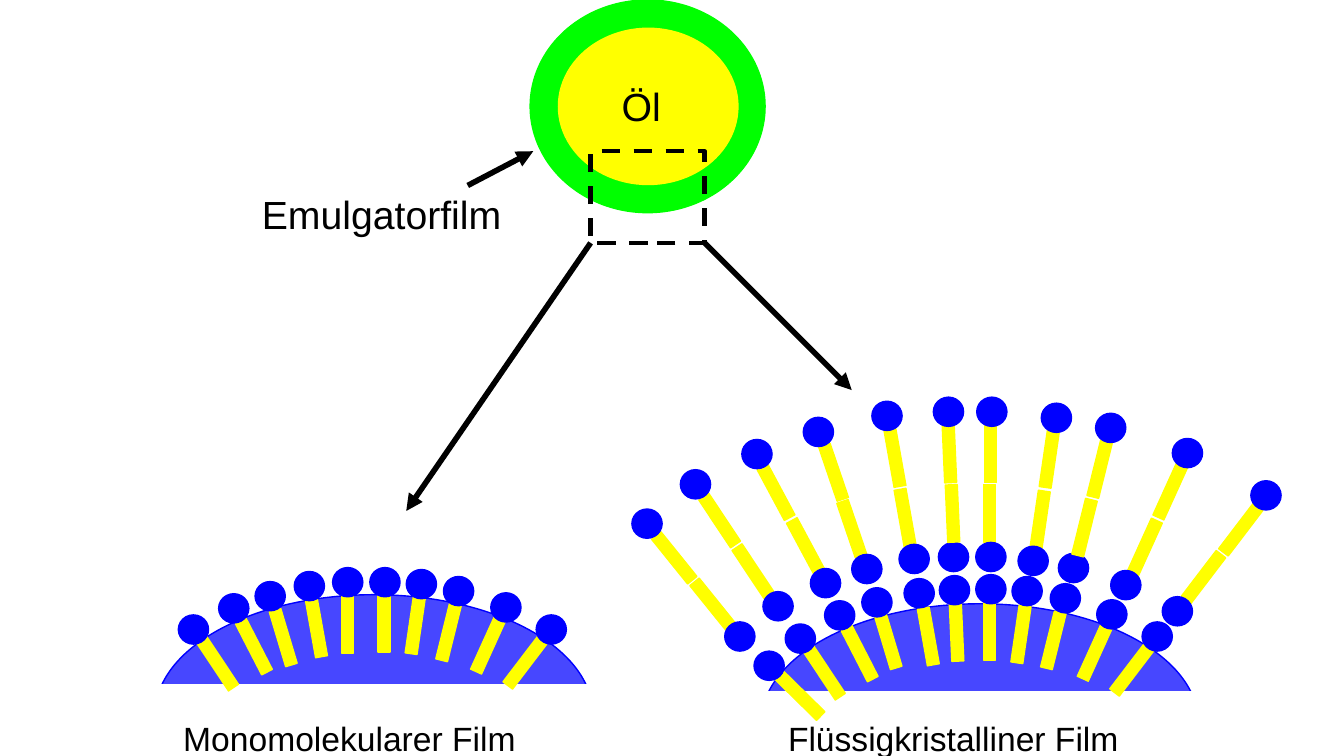
from lxml import etree
from pptx import Presentation
from pptx.dml.color import RGBColor
from pptx.enum import dml, shapes as kinds, text
from pptx.oxml.ns import qn
from pptx.util import Pt

THEME = {
    "film": "00FF00", "oil": "FFFF00", "water": "0000FF", "paper": "FFFFFF", "ink": "000000",
    "font": "Arial", "label": 28, "caption": 24,
    "outline": 1, "arrow": 4, "zoom": 3.25, "dome_alpha": 72,
}
SLIDE = (960, 540)
TAIL = (8.6, 41)
HEAD = (21.6, 20.9)
DOME = (312.5, 170)
MASK = (379.5, 114.5)
CAPTION = (275, 36)

# Boxes are left, top, width, height
DROPLET = (378.7, 0, 167.8, 151.9)
OIL_CORE = (398.9, 20.2, 128.2, 111.6)
ZOOM_FRAME = (421.9, 108, 81.4, 65.5)
LABELS = [("Öl", (437, 55.4, 80, 41)), ("Emulgatorfilm", (180, 132.5, 201, 41))]
ARROWS = [
    ((334.1, 132.5), (380.9, 108)),
    ((421.9, 173.5), (290.2, 365)),
    ((503.3, 173.5), (608.4, 278.6)),
]

# Each molecule: angle, left/top of its tails, left/top of its heads
MONOLAYER = [
    (-33.6, [(151.2, 453.6)], [(127.4, 439.2)]),
    (-27.2, [(177.1, 441.4)], [(156.2, 424.1)]),
    (-16.7, [(198, 434.9)], [(182.2, 415.4)]),
    (-10.1, [(221.8, 428.4)], [(210.2, 408.2)]),
    (0, [(244.1, 425.5)], [(237.6, 405.4)]),
    (0, [(270, 424.8)], [(264.2, 405.4)]),
    (8.3, [(292.3, 426.2)], [(290.2, 406.8)]),
    (13.9, [(316.1, 431.3)], [(316.8, 411.8)]),
    (24.4, [(344.2, 440.6)], [(350.6, 423.4)]),
    (37.3, [(370.8, 452.9)], [(383, 439.2)]),
]
SURFACE_LAYER = [
    (-45.5, [(567.4, 476.6)], [(538.6, 465.1)]),
    (-33.6, [(584.6, 460.1)], [(560.9, 445.7)]),
    (-27.2, [(609.8, 446.4)], [(589, 429.1)]),
    (-16.7, [(630, 437)], [(615.6, 419.8)]),
    (-10.1, [(658.8, 434.2)], [(645.8, 413.3)]),
    (-2.5, [(679, 431.3)], [(671, 411.1)]),
    (0, [(702.7, 430.6)], [(697, 410.4)]),
    (8.3, [(725, 432.7)], [(722.9, 411.8)]),
    (13.9, [(748.1, 437)], [(750.2, 416.9)]),
    (24.4, [(777.6, 445.7)], [(783.4, 428.4)]),
    (37.3, [(804.2, 457.9)], [(815.8, 444.2)]),
]
# Inner heads that lie behind the tails of the double layer
TUCKED_HEADS = [(0, [], [(670.3, 387.4), (756, 395.3)])]
DOUBLE_LAYER = [
    (-38.9, [(504.7, 411.1), (477.4, 378)], [(517.7, 444.2), (451.4, 363.6)]),
    (-33.6, [(533.5, 387.4), (509.8, 351.4)], [(545, 422.6), (486, 335.5)]),
    (-28.2, [(571, 369.4), (550.1, 331.2)], [(578.9, 406.1), (529.9, 313.9)]),
    (-18.8, [(604.1, 357.1), (591.1, 316.8)], [(608.4, 396), (573.8, 298.1)]),
    (-10.1, [(642.2, 349.2), (635, 306.7)], [(642.2, 388.8), (622.8, 286.6)]),
    (-2.5, [(676.1, 346.3), (673.9, 303.8)], [(666.7, 283.7)]),
    (0, [(702.7, 346.3), (703.4, 303.8)], [(697, 387.4), (697.7, 283.7)]),
    (8.3, [(738.7, 350.6), (745.2, 307.4)], [(727.2, 390.2), (743.8, 288)]),
    (13.9, [(770.4, 356.4), (781.2, 314.6)], [(782.6, 295.2)]),
    (24.4, [(813.6, 370.1), (831.6, 330.5)], [(793.4, 407.5), (837.4, 313.2)]),
    (37.3, [(855.4, 391.7), (882, 357.8)], [(830.2, 426.2), (893.5, 343.4)]),
]
FILMS = [
    {"caption": "Monomolekularer Film", "caption_at": (123.8, 509), "dome_at": (110.9, 424.8),
     "mask_at": (83.5, 488.9), "layers": [MONOLAYER]},
    {"caption": "Flüssigkristalliner Film", "caption_at": (555.8, 509), "dome_at": (543.6, 431.3),
     "mask_at": (517, 493.9), "layers": [SURFACE_LAYER, TUCKED_HEADS, DOUBLE_LAYER]},
]


def points(values):
    return [Pt(value) for value in values]


def colour(name):
    return RGBColor.from_string(THEME[name])


def add_figure(parent, preset, box, fill=None, line=None, width=THEME["outline"], angle=0):
    figure = parent.add_shape(preset, *points(box))
    figure.shadow.inherit = False
    figure.rotation = angle % 360
    if fill:
        figure.fill.solid()
        figure.fill.fore_color.rgb = colour(fill)
    else:
        figure.fill.background()
    figure.line.color.rgb = colour(line or fill)
    figure.line.width = Pt(width)
    return figure


def add_label(parent, wording, box, size):
    label = parent.add_textbox(*points(box))
    frame_format = {"word_wrap": True, "auto_size": text.MSO_AUTO_SIZE.SHAPE_TO_FIT_TEXT}
    for attribute, value in frame_format.items():
        setattr(label.text_frame, attribute, value)
    run = label.text_frame.paragraphs[0].add_run()
    run.text = wording
    for attribute, value in {"name": THEME["font"], "size": Pt(THEME[size])}.items():
        setattr(run.font, attribute, value)
    run.font.color.rgb = colour("ink")


def add_arrow(parent, start, end):
    arrow = parent.add_connector(kinds.MSO_CONNECTOR.STRAIGHT, *points(start + end))
    arrow.line.color.rgb = colour("ink")
    arrow.line.width = Pt(THEME["arrow"])
    etree.SubElement(arrow.line._get_or_add_ln(), qn("a:tailEnd"), type="triangle")
    etree.SubElement(arrow._element.spPr, qn("a:effectLst"))


def add_layer(parent, molecules):
    """Draw all tails of a layer, then its heads over them."""
    for angle, tails, _ in molecules:
        for at in tails:
            add_figure(parent, RECTANGLE, at + TAIL, "oil", angle=angle)
    for _, _, heads in molecules:
        for at in heads:
            add_figure(parent, OVAL, at + HEAD, "water")


def add_film(parent, film):
    dome = add_figure(parent, OVAL, film["dome_at"] + DOME, "water")
    tint = dome._element.spPr.find(qn("a:solidFill"))[0]
    etree.SubElement(tint, qn("a:alpha"), val=str(THEME["dome_alpha"] * 1000))
    add_figure(parent, RECTANGLE, film["mask_at"] + MASK, "paper")
    for molecules in film["layers"]:
        add_layer(parent, molecules)
    add_label(parent, film["caption"], film["caption_at"] + CAPTION, "caption")


RECTANGLE = kinds.MSO_SHAPE.RECTANGLE
OVAL = kinds.MSO_SHAPE.OVAL


def main():
    deck = Presentation()
    deck.slide_width, deck.slide_height = points(SLIDE)
    canvas = deck.slides.add_slide(deck.slide_layouts[6]).shapes

    emulsifier = add_figure(canvas, kinds.MSO_SHAPE.DONUT, DROPLET, "film")
    emulsifier.adjustments[0] = 0.131
    add_figure(canvas, OVAL, OIL_CORE, "oil")
    for wording, box in LABELS:
        add_label(canvas, wording, box, "label")
    zoom = add_figure(canvas, RECTANGLE, ZOOM_FRAME, line="ink", width=THEME["zoom"])
    zoom.line.dash_style = dml.MSO_LINE.DASH
    for start, end in ARROWS:
        add_arrow(canvas, start, end)
    for film in FILMS:
        add_film(canvas.add_group_shape().shapes, film)

    deck.save("out.pptx")


if __name__ == "__main__":
    main()
